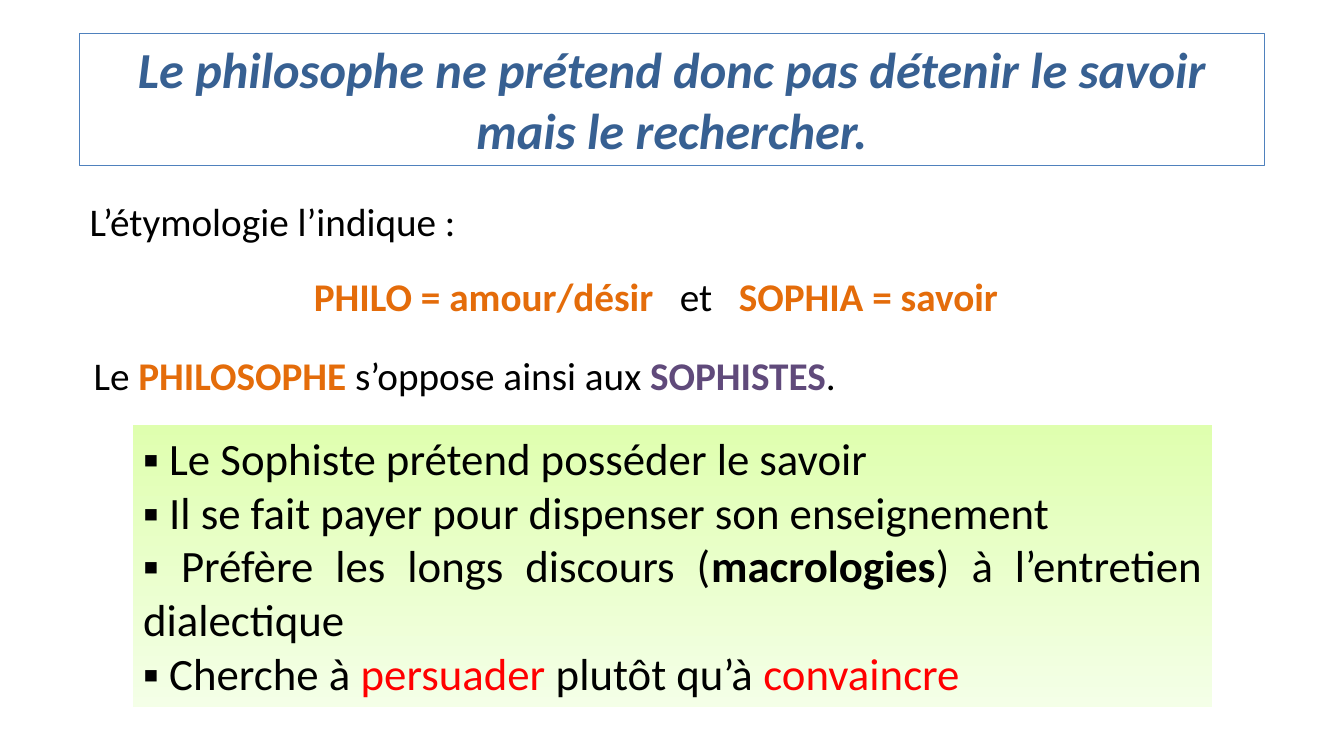
from lxml.etree import SubElement
from pptx import Presentation
from pptx.dml.color import RGBColor
from pptx.enum.text import MSO_ANCHOR, MSO_AUTO_SIZE, PP_ALIGN
from pptx.oxml.ns import qn
from pptx.util import Inches, Pt

BLACK = RGBColor(0x00, 0x00, 0x00)
BLUE = RGBColor(0x37, 0x60, 0x92)
EDGE = RGBColor(0x4F, 0x81, 0xBD)
ORANGE = RGBColor(0xE4, 0x6C, 0x0A)
PURPLE = RGBColor(0x60, 0x4A, 0x7B)
RED = RGBColor(0xFF, 0x00, 0x00)
LIME = RGBColor(0xDF, 0xFF, 0xAF)
PALE = RGBColor(0xF4, 0xFF, 0xE7)

TITLE = [[("Le philosophe ne prétend donc pas détenir le savoir mais le rechercher.", BLUE, True)]]
INTRO = [[("L’étymologie l’indique :", BLACK, False)]]
ROOTS = [[("PHILO = amour/désir   ", ORANGE, True), ("et   ", BLACK, False),
          ("SOPHIA = savoir", ORANGE, True)]]
CLASH = [[("Le", BLACK, False), (" PHILOSOPHE ", ORANGE, True),
          ("s’oppose ainsi aux ", BLACK, False), ("SOPHISTES", PURPLE, True),
          (".", BLACK, False)]]
TRAITS = [
    [("▪ Le Sophiste prétend posséder le savoir", BLACK, False)],
    [("▪ Il se fait payer pour dispenser son enseignement", BLACK, False)],
    [("▪ Préfère les longs discours (", BLACK, False), ("macrologies", BLACK, True),
     (") à l’entretien dialectique", BLACK, False)],
    [("▪ Cherche à ", BLACK, False), ("persuader", RED, False),
     (" plutôt qu’à ", BLACK, False), ("convaincre", RED, False)],
]
NOTES = [
    (INTRO, (0.79, 1.91, 8.9, 0.57), PP_ALIGN.JUSTIFY, True),
    (ROOTS, (2.97, 2.65, 7.07, 0.57), PP_ALIGN.CENTER, False),
    (CLASH, (0.83, 3.44, 8.82, 0.57), PP_ALIGN.JUSTIFY, True),
]


def place(shape, box):
    shape.left, shape.top, shape.width, shape.height = map(Inches, box)


def write(shape, lines, size, align, wrap=True, slant=False):
    frame = shape.text_frame
    frame.word_wrap = wrap
    frame.auto_size = MSO_AUTO_SIZE.NONE
    frame.text = "\n".join("" for _ in lines)
    for para, parts in zip(frame.paragraphs, lines):
        para.alignment = align
        para.space_before = Pt(0)
        for text, color, bold in parts:
            run = para.add_run()
            run.text = text
            font = run.font
            font.name, font.size = "Calibri", Pt(size)
            font.bold, font.italic = bold, slant
            font.color.rgb = color


def main():
    deck = Presentation()
    deck.slide_width, deck.slide_height = Inches(13.33), Inches(7.5)
    slide = deck.slides.add_slide(deck.slide_layouts[1])

    title = slide.shapes.title
    place(title, (0.79, 0.33, 11.75, 1.31))
    title.line.color.rgb = EDGE
    title.line.width = Pt(0.75)
    write(title, TITLE, 36, PP_ALIGN.CENTER, slant=True)
    title.text_frame.vertical_anchor = MSO_ANCHOR.TOP

    body = slide.placeholders[1]
    place(body, (1.32, 4.22, 10.7, 2.79))
    body.fill.gradient()
    body.fill.gradient_angle = 270
    for stop, color in zip(body.fill.gradient_stops, (LIME, PALE)):
        stop.color.rgb = color
    write(body, TRAITS, 32, PP_ALIGN.JUSTIFY)
    for para in body.text_frame.paragraphs:
        props = para._p.get_or_add_pPr()
        props.set("marL", "0")
        props.set("indent", "0")
        SubElement(props, qn("a:buNone"))

    for lines, box, align, wrap in NOTES:
        note = slide.shapes.add_textbox(*map(Inches, box))
        write(note, lines, 28, align, wrap)

    deck.save("out.pptx")


if __name__ == "__main__":
    main()
